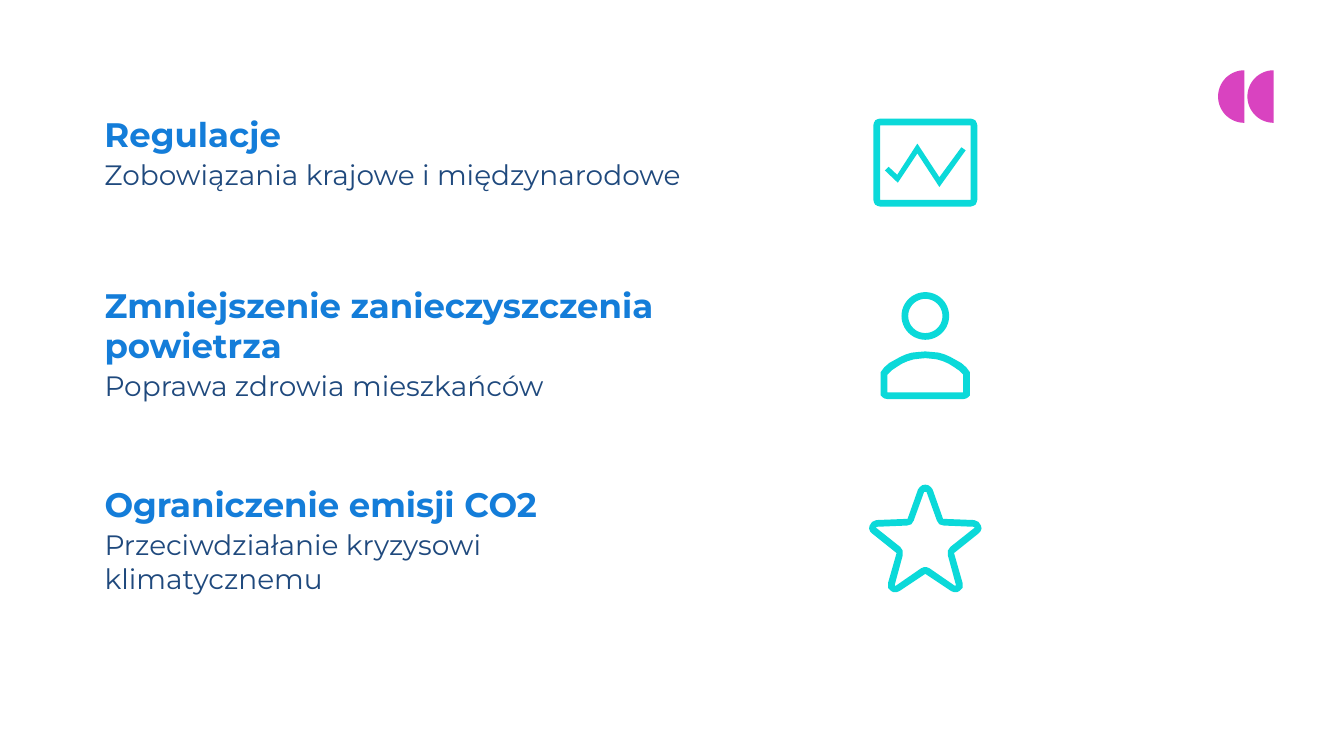
"""Build a slide of three reasons, each with its icon."""
from math import cos, pi, sin

from pptx import Presentation
from pptx.dml.color import RGBColor as RGB
from pptx.enum.text import MSO_ANCHOR as ANCHOR, MSO_AUTO_SIZE as FIT
from pptx.util import Inches, Pt

SIZE = 21.99, 12.37
THEME = {
    "font": "Montserrat",
    "head": {"size": 40, "color": "147DD9", "bold": True},
    "body": {"size": 33, "color": "1F497D", "bold": False},
    "icon": "0BD9D9",
    "mark": "D943C0",
}
GAP, STEP = 96, 3.8

BOXES = [
    ((1.7, 1.72, 10.56, 1.43), [
        ("Regulacje", "Zobowiązania krajowe i międzynarodowe"),
    ]),
    ((1.7, 4.51, 9.81, 4.74), [
        ("Zmniejszenie zanieczyszczenia powietrza", "Poprawa zdrowia mieszkańców"),
        ("Ograniczenie emisji CO2", "Przeciwdziałanie kryzysowi klimatycznemu"),
    ]),
]

AXIS = 15.14
HEAD_Y, HEAD_R, HOLE_R = 5.17, 0.39, 0.28
MARK_X, MARK_Y, MARK_R = (20.36, 20.84), 1.58, 0.43

TREND = [(15.8, 2.46), (15.73, 2.41), (15.37, 2.9), (15.01, 2.35), (14.68, 2.86),
         (14.54, 2.73), (14.48, 2.79), (14.69, 2.99), (15.01, 2.51), (15.37, 3.06)]

FRAME = [
    [(14.4, 1.94), (14.36, 1.95), (14.32, 1.97), (14.3, 2.01), (14.29, 2.05),
     (14.29, 3.27), (14.3, 3.31), (14.32, 3.35), (14.36, 3.37), (14.4, 3.38)],
    [(14.4, 2.05), (14.4, 3.27)],
]
BUST = [
    [(15.14, 5.75), (15.02, 5.76), (14.92, 5.77), (14.82, 5.8), (14.73, 5.84),
     (14.64, 5.89), (14.55, 5.94), (14.47, 6.01), (14.41, 6.09), (14.41, 6.47),
     (14.44, 6.5), (14.47, 6.52), (14.52, 6.53)],
    [(15.14, 5.86), (15.04, 5.87), (14.95, 5.88), (14.85, 5.91), (14.76, 5.95),
     (14.68, 6), (14.59, 6.06), (14.52, 6.13), (14.52, 6.42)],
]
STAR = [
    [(15.14, 7.93), (15.09, 7.94), (15.05, 7.97), (15.02, 8.01), (14.85, 8.49),
     (14.34, 8.51), (14.27, 8.54), (14.23, 8.6), (14.22, 8.65), (14.24, 8.7),
     (14.27, 8.73), (14.67, 9.05), (14.53, 9.54), (14.53, 9.62), (14.58, 9.67),
     (14.62, 9.69), (14.67, 9.69), (14.72, 9.67), (15.14, 9.39)],
    [(15.12, 8.05), (14.95, 8.52), (14.91, 8.58), (14.84, 8.6), (14.35, 8.62),
     (14.33, 8.63), (14.34, 8.64), (14.73, 8.95), (14.77, 9.01), (14.77, 9.09),
     (14.64, 9.57), (14.65, 9.59), (15.07, 9.3), (15.12, 9.28)],
]


def mirror(half):
    return half + [(2 * AXIS - x, y) for x, y in reversed(half)]


def arc(x, y, r, start=0, sweep=2 * pi, steps=48):
    turns = [start + sweep * i / steps for i in range(steps + 1)]
    return [(x + r * cos(t), y + r * sin(t)) for t in turns]


def draw(slide, rings, color):
    first, *rest = [[(Inches(x), Inches(y)) for x, y in ring] for ring in rings]
    pen = slide.shapes.build_freeform(*first[0], scale=1.0)
    pen.add_line_segments(first[1:], close=True)
    for ring in rest:
        pen.move_to(*ring[0])
        pen.add_line_segments(ring[1:], close=True)
    shape = pen.convert_to_shape()
    shape.shadow.inherit = False
    shape.fill.solid()
    shape.fill.fore_color.rgb = RGB.from_string(color)
    shape.line.fill.background()


def write(para, text, size, color, bold, before=0):
    para.space_before = Pt(before)
    run = para.add_run()
    run.text = text
    font = run.font
    font.name, font.size, font.bold = THEME["font"], Pt(size), bold
    font.color.rgb = RGB.from_string(color)


def add_text(slide, place, pairs):
    frame = slide.shapes.add_textbox(*map(Inches, place)).text_frame
    frame.word_wrap = True
    frame.auto_size = FIT.SHAPE_TO_FIT_TEXT
    frame.vertical_anchor = ANCHOR.TOP
    frame.margin_left, frame.margin_top = Inches(0.01), Inches(0.14)
    frame.margin_right = frame.margin_bottom = 0
    for i, (head, body) in enumerate(pairs):
        para = frame.add_paragraph() if i else frame.paragraphs[0]
        write(para, head, before=GAP if i else 0, **THEME["head"])
        write(frame.add_paragraph(), body, before=STEP, **THEME["body"])


def main():
    deck = Presentation()
    deck.slide_width, deck.slide_height = map(Inches, SIZE)
    slide = deck.slides.add_slide(deck.slide_layouts[6])

    draw(slide, [arc(x, MARK_Y, MARK_R, pi / 2, pi) for x in MARK_X], THEME["mark"])
    for place, pairs in BOXES:
        add_text(slide, place, pairs)

    frame, bust, star = [[mirror(half) for half in icon] for icon in (FRAME, BUST, STAR)]
    head = [arc(AXIS, HEAD_Y, r) for r in (HEAD_R, HOLE_R)]
    for rings in ([TREND] + frame, star, head, bust):
        draw(slide, rings, THEME["icon"])
    deck.save("out.pptx")


if __name__ == "__main__":
    main()
